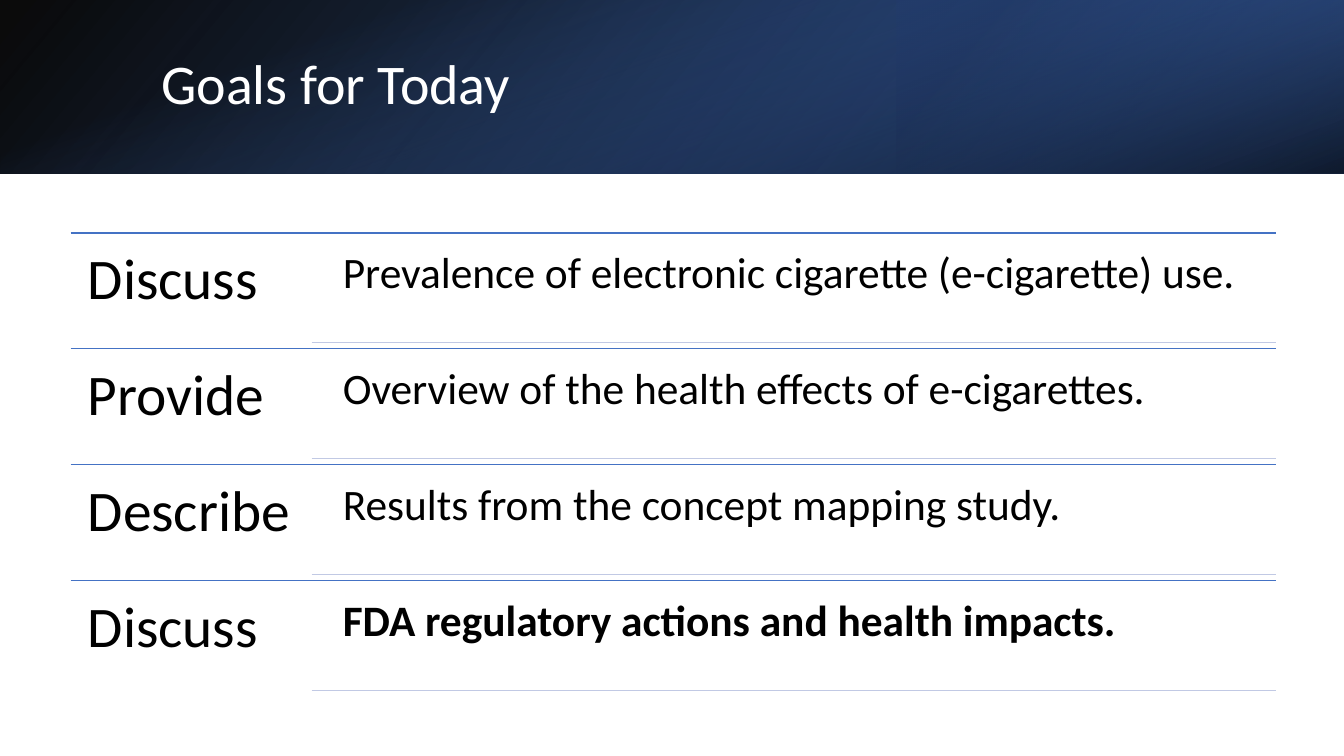
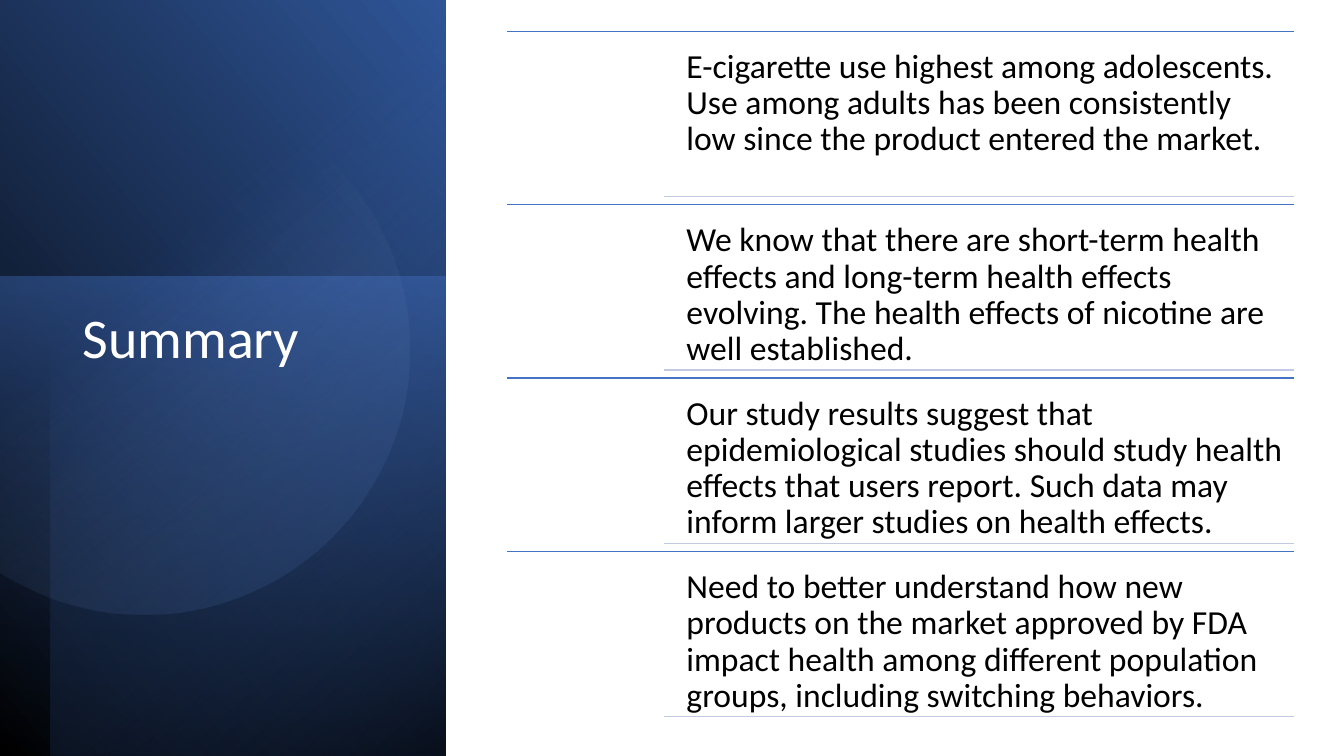
import math
from dataclasses import dataclass

from lxml import etree
from pptx import Presentation
from pptx.dml.color import RGBColor
from pptx.enum import shapes, text
from pptx.oxml.ns import qn
from pptx.util import Inches, Pt

FONT = "Calibri"
WHITE = RGBColor(0xFF, 0xFF, 0xFF)
BLACK = RGBColor(0x00, 0x00, 0x00)
BLUE = RGBColor(0x44, 0x72, 0xC4)
MID_BLUE = RGBColor(0x2F, 0x55, 0x97)
NAVY = RGBColor(0x20, 0x38, 0x64)
LIGHT_BLUE = RGBColor(0x8F, 0xAA, 0xDC)
PALE_LINE = RGBColor(0xC1, 0xC9, 0xE4)

SLIDE_WIDTH, SLIDE_HEIGHT = 13.33, 7.5
HEADER_HEIGHT = 1.72
PANEL_WIDTH = 4.42
TITLE_ONLY_LAYOUT = 5

GOALS = [
    ("Discuss", "Prevalence of electronic cigarette (e-cigarette) use.", False),
    ("Provide", "Overview of the health effects of e-cigarettes.", False),
    ("Describe", "Results from the concept mapping study.", False),
    ("Discuss", "FDA regulatory actions and health impacts.", True),
]
FINDINGS = [
    "E-cigarette use highest among adolescents. Use among adults has been "
    "consistently low since the product entered the market.",
    "We know that there are short-term health effects and long-term health "
    "effects evolving. The health effects of nicotine are well established.",
    "Our study results suggest that epidemiological studies should study health "
    "effects that users report. Such data may inform larger studies on health effects.",
    "Need to better understand how new products on the market approved by FDA "
    "impact health among different population groups, including switching behaviors.",
]


@dataclass
class RuledList:
    """Measures, in inches and points, of a list with a rule above and below each row."""
    left: float
    right: float
    top: float
    pitch: float
    rule_left: float
    text_left: float
    text_offset: float
    text_height: float
    inset: float
    size: int


GOAL_LIST = RuledList(0.7, 12.66, 2.31, 1.15, 3.09, 3.27, 0.05, 1.04, 0.13, 31)
FINDING_LIST = RuledList(5.03, 12.83, 0.31, 1.72, 6.59, 6.71, 0.08, 1.56, 0.1, 24)


def fill_gradient(shape, stops, angle):
    """Fill with two (position, colour, opacity) stops, percent, at a clockwise angle."""
    shape.shadow.inherit = False
    shape.line.fill.background()
    shape.fill.gradient()
    shape.fill.gradient_angle = 360 - angle
    for stop, (position, color, _) in zip(shape.fill.gradient_stops, stops):
        stop.position = position / 100
        stop.color.rgb = color
    for color_element, (_, _, opacity) in zip(shape._element.spPr.iter(qn("a:srgbClr")), stops):
        etree.SubElement(color_element, qn("a:alpha"), val=str(opacity * 1000))


def add_band(slide, box, stops, angle, rotation=0, flip=False):
    """Add a gradient rectangle that covers box once it has been rotated."""
    left, top, width, height = box
    if rotation in (90, 270):
        left, top = left + (width - height) / 2, top + (height - width) / 2
        width, height = height, width
    band = slide.shapes.add_shape(shapes.MSO_SHAPE.RECTANGLE, Inches(left), Inches(top),
                                  Inches(width), Inches(height))
    band.rotation = rotation
    if flip:
        band._element.spPr.find(qn("a:xfrm")).set("flipH", "1")
    fill_gradient(band, stops, angle)


def add_cut_circle(slide, center_x, center_y, radius):
    """Add a translucent circle cut off at the left edge of the slide."""
    limit = math.acos(-center_x / radius)
    steps = 120
    angles = [limit * (2 * step / steps - 1) for step in range(steps + 1)]
    points = [(Inches(center_x + radius * math.cos(angle)),
               Inches(center_y + radius * math.sin(angle))) for angle in angles]
    builder = slide.shapes.build_freeform(*points[0])
    builder.add_line_segments(points[1:], close=True)
    fill_gradient(builder.convert_to_shape(),
                  [(39, LIGHT_BLUE, 0), (100, MID_BLUE, 26)], 52)


def write(paragraph, content, size, color, bold=False):
    paragraph.alignment = text.PP_ALIGN.LEFT
    paragraph.line_spacing = 0.9
    run = paragraph.add_run()
    run.text = content
    run.font.name = FONT
    run.font.size = Pt(size)
    run.font.color.rgb = color
    run.font.bold = bold


def set_title(slide, content, box, anchor):
    """Write the title and bring it in front of the bands."""
    title = slide.shapes.title
    title.left, title.top, title.width, title.height = map(Inches, box)
    title.text_frame.auto_size = text.MSO_AUTO_SIZE.NONE
    title.text_frame.vertical_anchor = anchor
    write(title.text_frame.paragraphs[0], content, 40, WHITE)
    slide.shapes._spTree.append(title._element)


def add_rule(slide, left, right, y, color):
    rule = slide.shapes.add_connector(shapes.MSO_CONNECTOR.STRAIGHT, Inches(left), Inches(y),
                                      Inches(right), Inches(y))
    rule.line.color.rgb = color
    rule.line.width = Pt(1)
    etree.SubElement(rule._element.spPr, qn("a:effectLst"))


def add_text(slide, box, content, size, inset, bold=False):
    frame = slide.shapes.add_textbox(*map(Inches, box)).text_frame
    frame.word_wrap = True
    frame.margin_left = frame.margin_right = Inches(inset)
    frame.margin_top = frame.margin_bottom = Inches(inset)
    write(frame.paragraphs[0], content, size, BLACK, bold)


def add_ruled_list(slide, layout, rows):
    """Add rows of (label, content, bold); an empty label is left out."""
    for index, (label, content, bold) in enumerate(rows):
        top = layout.top + index * layout.pitch
        text_top = top + layout.text_offset
        add_rule(slide, layout.left, layout.right, top, BLUE)
        if label:
            add_text(slide, (layout.left, top, layout.rule_left - layout.left, layout.pitch),
                     label, 41, 0.17)
        add_text(slide, (layout.text_left, text_top, layout.right - layout.text_left,
                         layout.text_height), content, layout.size, layout.inset, bold)
        add_rule(slide, layout.rule_left, layout.right, text_top + layout.text_height, PALE_LINE)


def add_title_slide(presentation):
    return presentation.slides.add_slide(presentation.slide_layouts[TITLE_ONLY_LAYOUT])


def build_goals(presentation):
    slide = add_title_slide(presentation)
    header = (0, 0, SLIDE_WIDTH, HEADER_HEIGHT)
    add_band(slide, header, [(0, BLACK, 96), (100, MID_BLUE, 100)], 140, flip=True)
    add_band(slide, (8.89, 0, 4.44, HEADER_HEIGHT), [(19, NAVY, 68), (100, BLUE, 79)], 320,
             rotation=180, flip=True)
    add_band(slide, header, [(23, BLUE, 0), (99, BLACK, 74)], 340, rotation=90)
    set_title(slide, "Goals for Today", (1.5, 0.38, 10.98, 0.96), text.MSO_ANCHOR.MIDDLE)
    add_ruled_list(slide, GOAL_LIST, GOALS)


def build_summary(presentation):
    slide = add_title_slide(presentation)
    add_band(slide, (0, 0, PANEL_WIDTH, SLIDE_HEIGHT),
             [(0, BLACK, 100), (100, MID_BLUE, 100)], 310, rotation=90, flip=True)
    add_band(slide, (0, 2.74, PANEL_WIDTH, 4.76), [(0, BLUE, 50), (100, NAVY, 0)], 190,
             rotation=270)
    add_band(slide, (0.5, 0, 3.92, SLIDE_HEIGHT), [(0, BLACK, 59), (69, BLUE, 0)], 220,
             rotation=270, flip=True)
    add_cut_circle(slide, 1.43, 3.47, 2.63)
    set_title(slide, "Summary", (0.72, 3.03, 3.15, 3.36), text.MSO_ANCHOR.TOP)
    add_ruled_list(slide, FINDING_LIST, [("", finding, False) for finding in FINDINGS])


def main():
    presentation = Presentation()
    presentation.slide_width = Inches(SLIDE_WIDTH)
    presentation.slide_height = Inches(SLIDE_HEIGHT)
    build_goals(presentation)
    build_summary(presentation)
    presentation.save("out.pptx")


if __name__ == "__main__":
    main()
